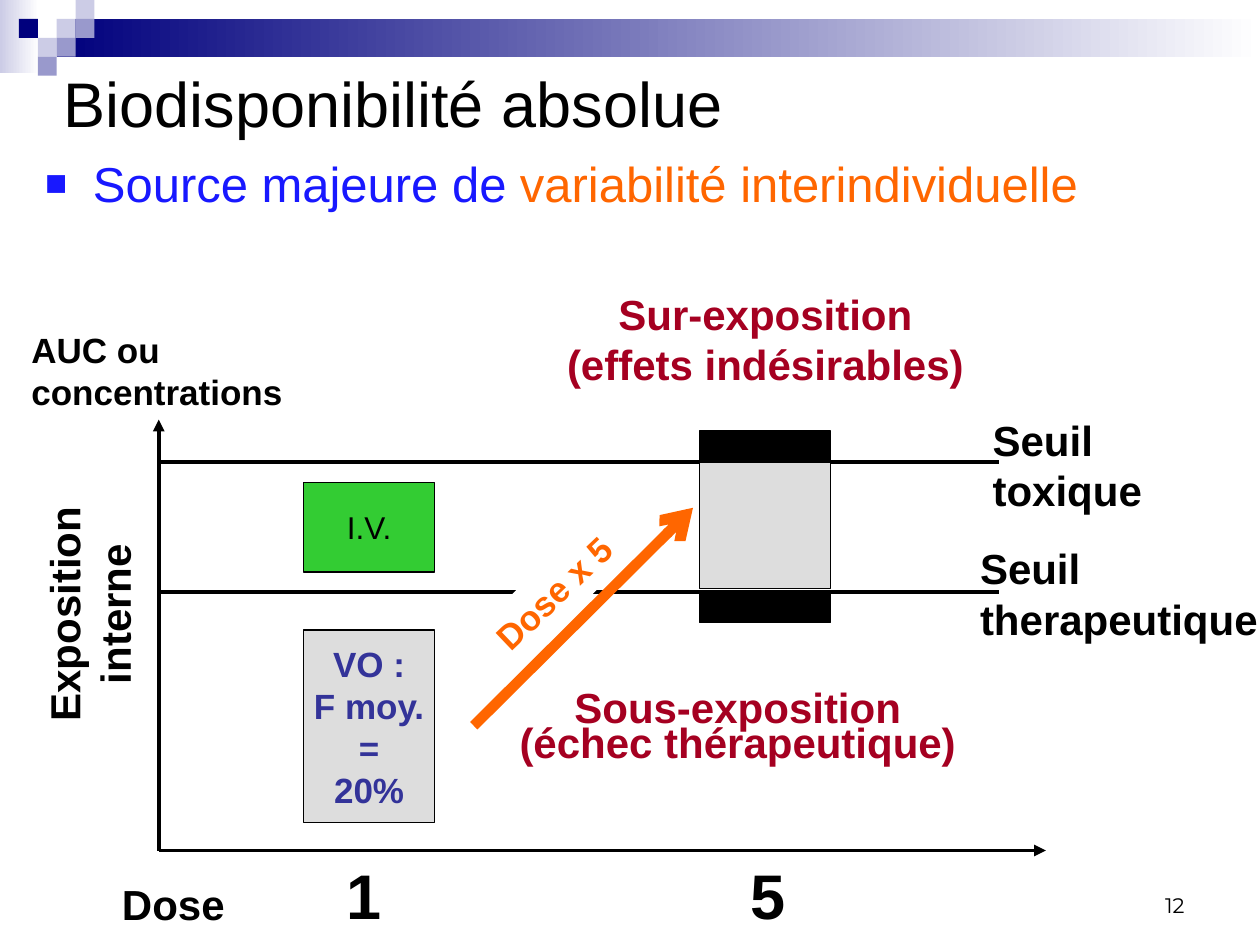
from lxml import etree
from pptx import Presentation
from pptx.dml.color import RGBColor
from pptx.enum.shapes import MSO_CONNECTOR as Connector, MSO_SHAPE as Shape
from pptx.enum.text import MSO_ANCHOR as Anchor, PP_ALIGN as Align
from pptx.oxml.ns import qn
from pptx.util import Inches, Pt

BLACK = RGBColor(0x00, 0x00, 0x00)
WHITE = RGBColor(0xFF, 0xFF, 0xFF)
NAVY = RGBColor(0x00, 0x00, 0x7D)
LAVENDER = RGBColor(0xCC, 0xCC, 0xE6)
PERIWINKLE = RGBColor(0x99, 0x99, 0xCC)
BLUE = RGBColor(0x18, 0x18, 0xFF)
INDIGO = RGBColor(0x33, 0x33, 0x99)
ORANGE = RGBColor(0xFF, 0x66, 0x00)
CRIMSON = RGBColor(0xA5, 0x00, 0x21)
GREEN = RGBColor(0x33, 0xCC, 0x33)
GREY = RGBColor(0xDD, 0xDD, 0xDD)


def inches(box):
    return [Inches(length) for length in box]


def write(shape, text, size, color=BLACK, bold=True, align=Align.LEFT,
          anchor=Anchor.TOP, wrap=False, font="Arial", spacing=()):
    """Fill a shape with text; spacing lists the line spacing of each paragraph."""
    frame = shape.text_frame
    frame.text = text
    frame.word_wrap = wrap
    frame.vertical_anchor = anchor
    for para in frame.paragraphs:
        para.alignment = align
        for span in para.runs:
            span.font.size, span.font.bold, span.font.name = Pt(size), bold, font
            span.font.color.rgb = color
    for para, lines in zip(frame.paragraphs, spacing):
        para.line_spacing = lines


def add_text(page, box, text, size, **style):
    shape = page.shapes.add_textbox(*inches(box))
    write(shape, text, size, **style)
    return shape


def add_block(page, box, fill, line=None, fade=False):
    shape = page.shapes.add_shape(Shape.RECTANGLE, *inches(box))
    shape.shadow.inherit = False
    if fade:
        shape.fill.gradient()
        shape.fill.gradient_angle = 0
        for stop, color in zip(shape.fill.gradient_stops, (fill, WHITE)):
            stop.color.rgb = color
    else:
        shape.fill.solid()
        shape.fill.fore_color.rgb = fill
    if line is None:
        shape.line.fill.background()
    else:
        shape.line.color.rgb = line
        shape.line.width = Pt(0.75)
    return shape


def add_line(page, start, end, color=BLACK, width=2.25, arrow=None):
    line = page.shapes.add_connector(
        Connector.STRAIGHT, *inches(start), *inches(end))
    line.line.color.rgb = color
    line.line.width = Pt(width)
    if arrow:
        etree.SubElement(line.line._get_or_add_ln(), qn("a:tailEnd"), type=arrow)
    etree.SubElement(line._element.spPr, qn("a:effectLst"))


def add_banner(page, left, top, width):
    """Fading bar with a staircase of small squares."""
    step = 0.15
    add_block(page, (left, top, 0.31, 0.58), LAVENDER, fade=True)
    add_block(page, (left + 3 * step, top + step, width - 3 * step, 2 * step),
              NAVY, fade=True)
    squares = [(3, 1, LAVENDER), (4, 0, LAVENDER), (4, 1, PERIWINKLE),
               (2, 2, LAVENDER), (1, 1, NAVY), (3, 2, PERIWINKLE),
               (2, 3, PERIWINKLE)]
    for column, row, color in squares:
        add_block(page, (left + column * step, top + row * step, step, step), color)


def add_heading(page, left, top, width):
    """Title and the bulleted statement under it."""
    add_text(page, (left + 0.15, top, width - 0.5, 0.59), "Biodisponibilité absolue",
             36, bold=False, anchor=Anchor.MIDDLE, wrap=True)
    body = add_text(page, (left, top + 0.65, width, 0.73), "Source majeure de ",
                    28, color=BLUE, bold=False, wrap=True)
    para = body.text_frame.paragraphs[0]
    para.space_before = Pt(5.6)
    span = para.add_run()
    span.text = "variabilité interindividuelle"
    span.font.size, span.font.name = Pt(28), "Arial"
    span.font.color.rgb = ORANGE
    # Square bullet with a hanging indent
    props = para._p.get_or_add_pPr()
    props.set("marL", str(Inches(0.38)))
    props.set("indent", str(-Inches(0.38)))
    color = etree.SubElement(props, qn("a:buClr"))
    etree.SubElement(color, qn("a:srgbClr"), val=str(BLUE))
    etree.SubElement(props, qn("a:buSzPct"), val="75000")
    etree.SubElement(props, qn("a:buFont"), typeface="Arial")
    etree.SubElement(props, qn("a:buChar"), char="■")


def add_diagram(page, left, top, width, height):
    """Exposure against dose, with both thresholds."""
    bottom = top + height
    toxic, therapeutic = top + 0.34, top + 1.37
    threshold_end = left + 6.67
    low_dose, high_dose, bar = left + 1.15, left + 4.29, 1.04

    # Axes and their labels
    add_line(page, (left, bottom), (left, top), arrow="triangle")
    add_line(page, (left, bottom), (left + width, bottom), arrow="triangle")
    add_text(page, (left - 0.39, bottom + 0.17, 1.03, 0.51), "Dose", 24)
    for dose, x in (("1", low_dose + 0.24), ("5", high_dose + 0.31)):
        add_text(page, (x, bottom, 0.48, 0.71), dose, 36)
    exposure = add_text(page, (left - 1.51, top + 1.09, 1.92, 0.91),
                        "Exposition\ninterne", 24, align=Align.CENTER)
    exposure.rotation = 270
    add_text(page, (left - 1.11, top - 0.77, 2.21, 0.77),
             "AUC ou\nconcentrations", 20)

    # Threshold labels and the toxic line
    add_text(page, (threshold_end - 0.15, toxic - 0.43, 1.4, 0.91),
             "Seuil\ntoxique", 24)
    add_text(page, (threshold_end - 0.25, therapeutic - 0.44, 2.53, 0.91),
             "Seuil\ntherapeutique", 24, wrap=True)
    add_line(page, (left, toxic), (threshold_end, toxic))

    # Spread of exposure at dose 5
    for y, tall, fill in ((toxic, 1, GREY), (toxic - 0.25, 0.25, BLACK),
                          (therapeutic - 0.01, 0.25, BLACK)):
        add_block(page, (high_dose, y, bar, tall), fill, BLACK)
    add_line(page, (left, therapeutic), (threshold_end, therapeutic))

    # Risks on either side of the thresholds
    add_text(page, (left + 2.75, top - 1.01, 4.13, 0.83),
             "Sur-exposition\n(effets indésirables)", 24, color=CRIMSON,
             align=Align.CENTER, wrap=True, spacing=(0.8,))
    add_text(page, (left + 2.15, top + 2.14, 4.89, 0.67),
             "Sous-exposition\n(échec thérapeutique)", 24, color=CRIMSON,
             align=Align.CENTER, wrap=True, spacing=(0.7, 0.7))

    # Routes compared at dose 1
    intravenous = add_block(page, (low_dose, top + 0.5, bar, 0.71), GREEN, BLACK)
    write(intravenous, "I.V.", 18, bold=False, align=Align.CENTER,
          anchor=Anchor.MIDDLE)
    oral = add_block(page, (low_dose, top + 1.67, bar, 1.53), GREY, BLACK)
    write(oral, "VO :\nF moy.\n=\n20%", 20, color=INDIGO, align=Align.CENTER,
          anchor=Anchor.MIDDLE)

    # Step from dose 1 to dose 5
    add_line(page, (left + 2.5, top + 2.43), (left + 4.24, top + 0.7),
             ORANGE, 6, "arrow")
    increase = add_block(page, (left + 2.46, top + 1.15, 1.36, 0.44), WHITE)
    increase.rotation = 316.3
    write(increase, "Dose x 5", 20, color=ORANGE)


def add_page_number(page, box):
    add_text(page, box, "12", 12, bold=False, align=Align.RIGHT,
             anchor=Anchor.BOTTOM, wrap=True, font="Montserrat")


def main():
    deck = Presentation()
    deck.slide_width, deck.slide_height = Inches(10), Inches(7.5)
    page = deck.slides.add_slide(deck.slide_layouts[6])
    add_banner(page, 0, 0, 10)
    add_diagram(page, 1.26, 3.33, 7.04, 3.42)
    add_page_number(page, (7.17, 6.83, 2.33, 0.5))
    add_heading(page, 0.26, 0.52, 9.96)
    deck.save("out.pptx")


if __name__ == "__main__":
    main()
